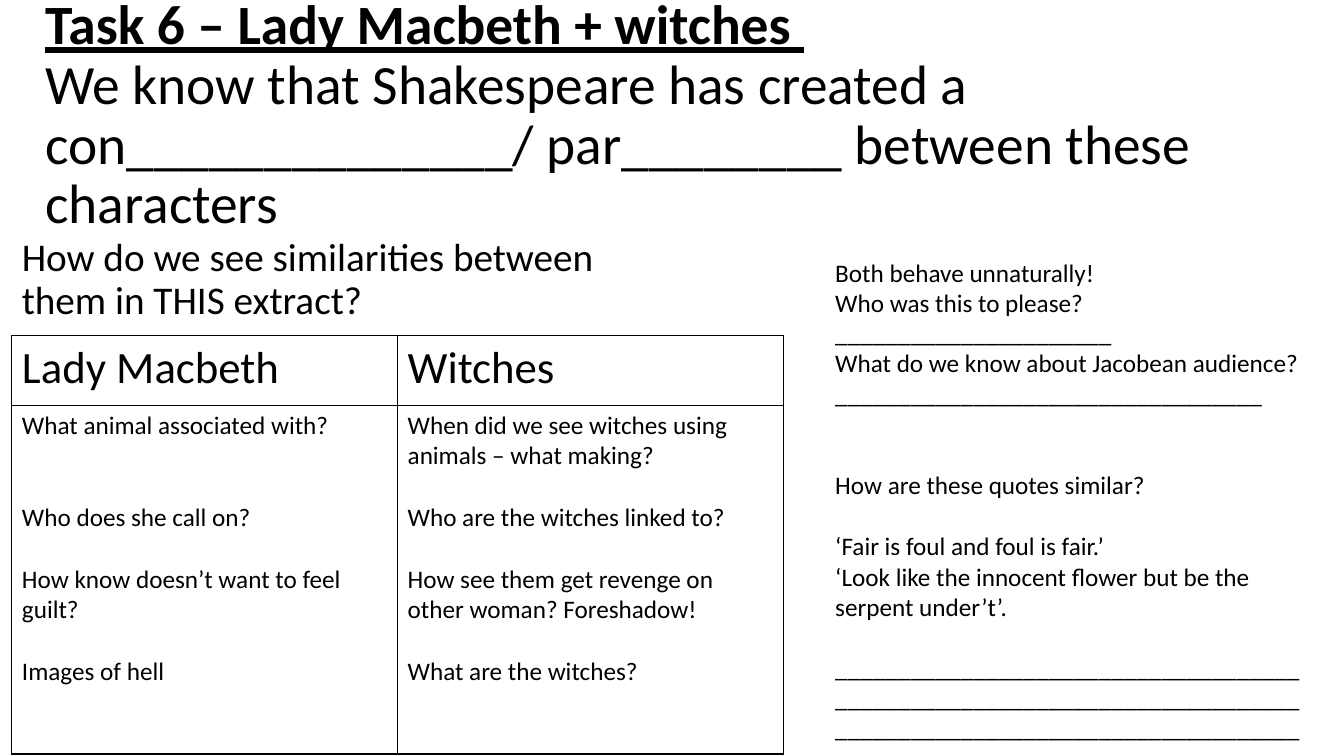
from dataclasses import dataclass

from lxml.etree import SubElement
from pptx import Presentation
from pptx.dml.color import RGBColor
from pptx.enum.text import MSO_ANCHOR
from pptx.oxml.ns import qn
from pptx.slide import Slide
from pptx.table import _Cell
from pptx.text.text import TextFrame
from pptx.util import Cm, Pt

BLACK = RGBColor(0x00, 0x00, 0x00)
FONT = "Calibri"
LINE_HEIGHT = 22
BORDER_WIDTH = Pt(1)


@dataclass(frozen=True)
class Line:
    text: str
    blanks_above: int = 0


@dataclass(frozen=True)
class Column:
    heading: str
    prompts: tuple[Line, ...]


@dataclass(frozen=True)
class Box:
    left: float
    top: float
    width: float
    height: float


COLUMNS = (
    Column("Lady Macbeth", (
        Line("What animal associated with?"),
        Line("Who does she call on?", 2),
        Line("How know doesn’t want to feel guilt?", 1),
        Line("Images of hell", 1),
    )),
    Column("Witches", (
        Line("When did we see witches using animals – what making?"),
        Line("Who are the witches linked to?", 1),
        Line("How see them get revenge on other woman? Foreshadow!", 1),
        Line("What are the witches?", 1),
    )),
)

CONTEXT_QUESTIONS = (
    Line("Both behave unnaturally!"),
    Line("Who was this to please?"),
    Line("_" * 22),
    Line("What do we know about Jacobean audience?"),
    Line("_" * 34),
    Line("How are these quotes similar?", 2),
    Line("‘Fair is foul and foul is fair.’", 1),
    Line("‘Look like the innocent flower but be the serpent under’t’."),
    Line("_" * 111, 1),
)


def write(frame: TextFrame, text: str, *, size: float = 18, bold: bool = False,
          underline: bool = False, spacing: float = 1.0, before: float = 0) -> None:
    paragraph = frame.paragraphs[0] if not frame.text else frame.add_paragraph()
    paragraph.line_spacing = spacing
    paragraph.space_before = Pt(before)
    run = paragraph.add_run()
    run.text = text
    run.font.name = FONT
    run.font.size = Pt(size)
    run.font.bold = bold
    run.font.underline = underline
    run.font.color.rgb = BLACK


def write_lines(frame: TextFrame, lines: tuple[Line, ...]) -> None:
    for line in lines:
        write(frame, line.text, before=line.blanks_above * LINE_HEIGHT)


def add_text_area(slide: Slide, box: Box, anchor: MSO_ANCHOR = MSO_ANCHOR.TOP) -> TextFrame:
    area = slide.shapes.add_textbox(Cm(box.left), Cm(box.top), Cm(box.width), Cm(box.height))
    frame = area.text_frame
    frame.word_wrap = True
    frame.vertical_anchor = anchor
    return frame


def outline(cell: _Cell) -> None:
    properties = cell._tc.get_or_add_tcPr()
    for side in ("a:lnL", "a:lnR", "a:lnT", "a:lnB"):
        border = SubElement(properties, qn(side), w=str(BORDER_WIDTH))
        fill = SubElement(border, qn("a:solidFill"))
        SubElement(fill, qn("a:srgbClr"), val=str(BLACK))
    cell.fill.background()


def add_comparison(slide: Slide, box: Box, heading_height: float) -> None:
    comparison = slide.shapes.add_table(
        2, len(COLUMNS), Cm(box.left), Cm(box.top), Cm(box.width), Cm(box.height)
    ).table
    comparison.rows[0].height = Cm(heading_height)
    comparison.rows[1].height = Cm(box.height - heading_height)
    for index, column in enumerate(COLUMNS):
        comparison.columns[index].width = Cm(box.width / len(COLUMNS))
        heading, prompts = comparison.cell(0, index), comparison.cell(1, index)
        write(heading.text_frame, column.heading, size=32)
        write_lines(prompts.text_frame, column.prompts)
        outline(heading)
        outline(prompts)


def main() -> None:
    presentation = Presentation()
    presentation.slide_width = Cm(33.87)
    presentation.slide_height = Cm(19.05)
    slide = presentation.slides.add_slide(presentation.slide_layouts[6])

    task = add_text_area(slide, Box(0.89, 1.09, 32.41, 3.68), MSO_ANCHOR.MIDDLE)
    write(task, "Task 6 – Lady Macbeth + witches ",
          size=39.6, bold=True, underline=True, spacing=0.9)
    write(task, "We know that Shakespeare has created a con______________/ "
                "par________ between these characters", size=39.6, spacing=0.9)

    question = add_text_area(slide, Box(0.3, 5.87, 15.01, 12.09))
    write(question, "How do we see similarities between them in THIS extract?",
          size=28, spacing=0.9, before=10)

    add_comparison(slide, Box(0.3, 8.46, 19.44, 10.54), heading_height=1.75)
    write_lines(add_text_area(slide, Box(20.8, 6.35, 12.5, 12.57)), CONTEXT_QUESTIONS)

    presentation.save("out.pptx")


if __name__ == "__main__":
    main()
